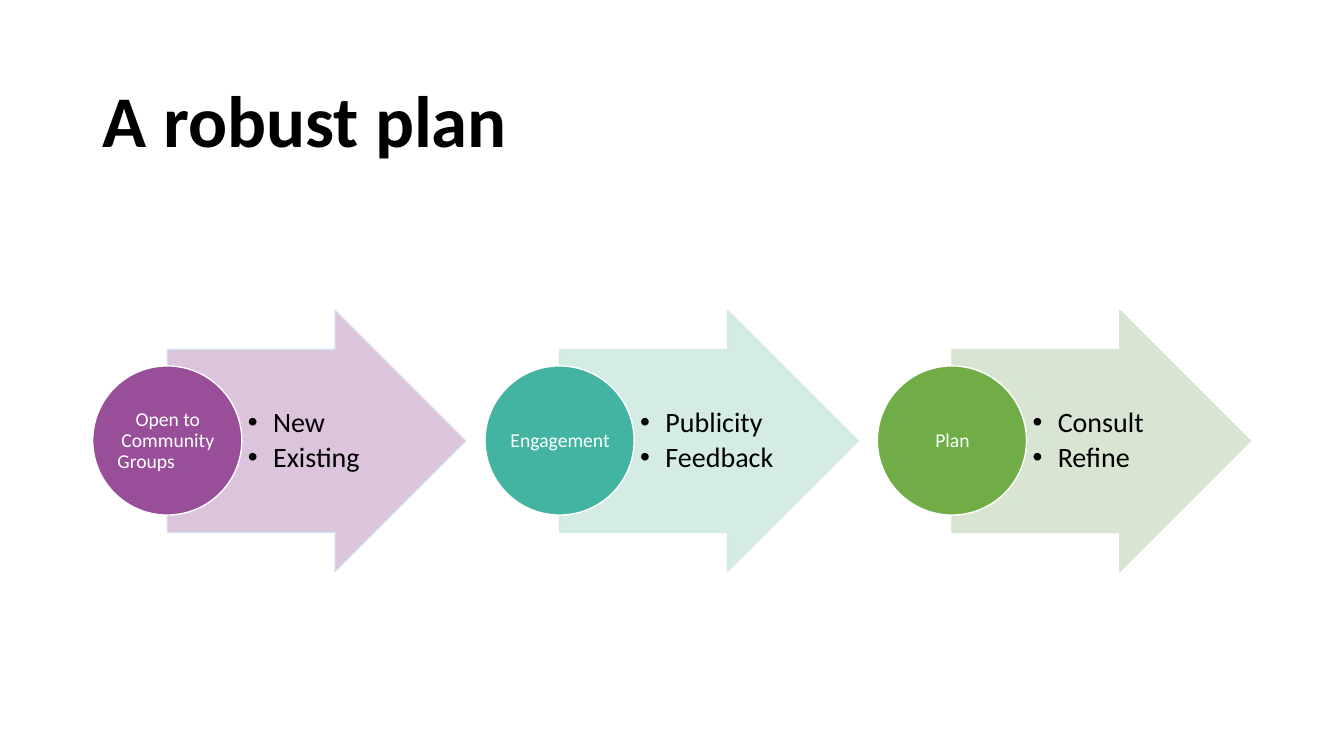
from dataclasses import dataclass

from lxml import etree
from pptx import Presentation
from pptx import util as u
from pptx.dml.color import RGBColor
from pptx.enum import shapes, text
from pptx.oxml import ns

WIDTH, HEIGHT = u.Inches(13.33), u.Inches(7.5)
LEFT, PITCH = 6.9, 29.19


@dataclass(frozen=True)
class Box:
    x: float
    y: float
    w: float
    h: float

    def shifted(self, column: int) -> "Box":
        return Box(LEFT + column * PITCH + self.x, self.y, self.w, self.h)

    def emu(self) -> tuple[int, ...]:
        sides = (WIDTH, HEIGHT, WIDTH, HEIGHT)
        return tuple(int(share * side / 100)
                     for share, side in zip((self.x, self.y, self.w, self.h), sides))


@dataclass(frozen=True)
class Stage:
    label: str
    points: tuple[str, ...]
    circle: str
    arrow: str
    alpha: int
    edge: str


TITLE = Box(LEFT, 8.13, 86.27, 16.53)
ARROW = Box(5.55, 41.07, 22.2, 34.53)
POINTS = Box(11.1, 46.27, 10.88, 24.13)
CIRCLE = Box(0, 48.4, 11.1, 19.73)
LABEL = Box(1.65, 51.33, 7.88, 14)

STAGES = (
    Stage("Open to Community Groups\t", ("New", "Existing"), "994E99", "994E99", 33, "D2DEEF"),
    Stage("Engagement", ("Publicity", "Feedback"), "42B4A1", "D0EAE1", 90, "D0EAE1"),
    Stage("Plan", ("Consult", "Refine"), "70AD47", "D5E3CF", 90, "D5E3CF"),
)

TITLE_FONT = {"name": "Calibri", "size": u.Pt(52), "bold": True}
POINT_FONT = {"name": "Calibri", "size": u.Pt(20)}
LABEL_FONT = {"name": "Calibri", "size": u.Pt(14)}
TITLE_PARA = {"line_spacing": 0.9, "space_after": u.Pt(6)}
POINT_PARA = {"line_spacing": 0.9, "space_after": u.Pt(3)}
LABEL_PARA = {"line_spacing": 0.9, "alignment": text.PP_ALIGN.CENTER}


def rgb(value: str) -> RGBColor:
    return RGBColor.from_string(value)


def apply(target, values: dict) -> None:
    for name, value in values.items():
        setattr(target, name, value)


def paint(fill, color: str, alpha: int) -> None:
    fill.solid()
    fill.fore_color.rgb = rgb(color)
    if alpha < 100:
        for clr in fill._xPr.iter(ns.qn("a:srgbClr")):
            etree.SubElement(clr, ns.qn("a:alpha"), val=str(alpha * 1000))


def add_figure(s, kind, box: Box, color: str, edge: str,
               alpha: int = 100, edge_alpha: int = 100):
    sp = s.shapes.add_shape(kind, *box.emu())
    sp.shadow.inherit = False
    paint(sp.fill, color, alpha)
    sp.line.width = u.Pt(1)
    paint(sp.line.fill, edge, edge_alpha)
    return sp


def add_bullet(p) -> None:
    pPr = p._p.get_or_add_pPr()
    apply_indent = {"marL": u.Inches(0.25), "indent": -u.Inches(0.25)}
    for name, value in apply_indent.items():
        pPr.set(name, str(value))
    etree.SubElement(pPr, ns.qn("a:buFont"), typeface="Arial")
    etree.SubElement(pPr, ns.qn("a:buChar"), char="•")


def add_text(s, box: Box, lines: tuple[str, ...], font: dict, para: dict, color: str,
             insets: tuple[float, ...], bullets: bool = False) -> None:
    tf = s.shapes.add_textbox(*box.emu()).text_frame
    sides = ("margin_left", "margin_top", "margin_right", "margin_bottom")
    apply(tf, {"word_wrap": True, "vertical_anchor": text.MSO_ANCHOR.MIDDLE,
               **{side: u.Inches(inset) for side, inset in zip(sides, insets)}})
    for i, line in enumerate(lines):
        p = tf.add_paragraph() if i else tf.paragraphs[0]
        apply(p, para)
        if bullets:
            add_bullet(p)
        r = p.add_run()
        r.text = line
        apply(r.font, font)
        r.font.color.rgb = rgb(color)


def add_stage(s, column: int, stage: Stage) -> None:
    arrow = add_figure(s, shapes.MSO_SHAPE.RIGHT_ARROW, ARROW.shifted(column),
                       stage.arrow, stage.edge, stage.alpha, 90)
    arrow.adjustments[0], arrow.adjustments[1] = 0.7, 0.5
    add_text(s, POINTS.shifted(column), stage.points, POINT_FONT, POINT_PARA, "000000",
             (0.06, 0.01, 0.03, 0.01), bullets=True)
    add_figure(s, shapes.MSO_SHAPE.OVAL, CIRCLE.shifted(column), stage.circle, "FFFFFF")
    add_text(s, LABEL.shifted(column), (stage.label,), LABEL_FONT, LABEL_PARA, "FFFFFF",
             (0.01,) * 4)


def main() -> None:
    prs = Presentation()
    prs.slide_width, prs.slide_height = WIDTH, HEIGHT
    s = prs.slides.add_slide(prs.slide_layouts[6])
    add_text(s, TITLE, ("A robust plan",), TITLE_FONT, TITLE_PARA, "000000",
             (0.1, 0.05, 0.1, 0.05))
    for column, stage in enumerate(STAGES):
        add_stage(s, column, stage)
    prs.save("out.pptx")


if __name__ == "__main__":
    main()
